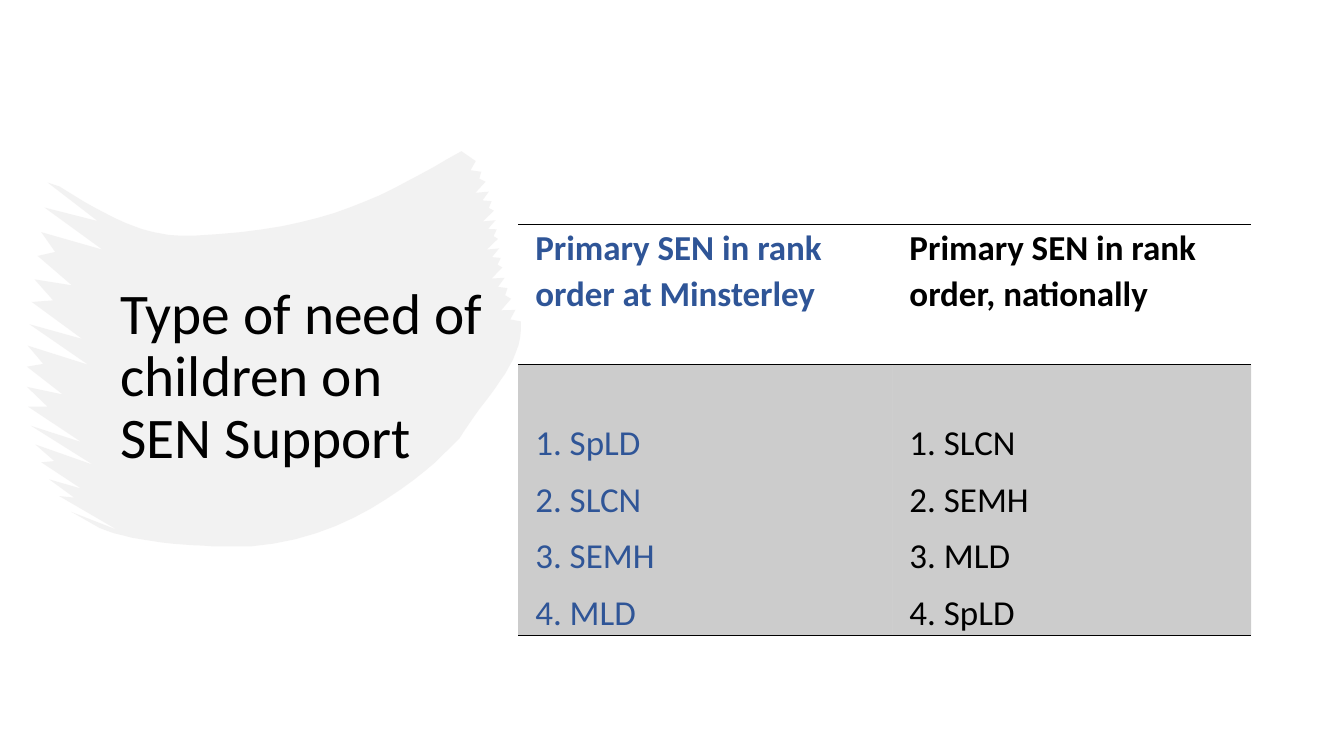
from itertools import cycle, pairwise

from lxml import etree
from pptx import Presentation
from pptx.dml.color import RGBColor
from pptx.enum.text import MSO_ANCHOR, MSO_AUTO_SIZE, PP_ALIGN
from pptx.oxml.ns import qn
from pptx.util import Cm, Pt

MIDDLE, TOP = MSO_ANCHOR.MIDDLE, MSO_ANCHOR.TOP
LEFT, NO_AUTOFIT = PP_ALIGN.LEFT, MSO_AUTO_SIZE.NONE
COLORS = {"ink": "000000", "school": "2F5597", "brush": "E7E6E6"}
FONT = "Calibri"

HEADING = "Type of need of children on SEN Support"
RANKINGS = [
    ("Primary SEN in rank order at Minsterley", "school",
     ["SpLD", "SLCN", "SEMH", "MLD"]),
    ("Primary SEN in rank order, nationally", "ink",
     ["SLCN", "SEMH", "MLD", "SpLD"]),
]
COLUMN_WIDTHS = (9.43, 9.04)
ROW_HEIGHTS = (3.54, 6.8)
TABLE_LEFT, TABLE_TOP = 13.06, 5.65
LIST_TOP_MARGIN = 1.37
TABLE_TEXT = {"size": 25, "spacing": 1.07, "after": 8}

BRUSH_EDGES = {
    "top left": [(1.5, 4.7), (3.4, 5.9), (4, 5.94), (4.88, 5.94)],
    "top": [(4.88, 5.94), (8.3, 5.8), (9.7, 4.9), (11.63, 3.81)],
    "upper right": [(11.99, 4.06), (12.8, 5.5), (12.3, 6.5), (13.13, 8.1)],
    "lower right": [(13.13, 8.1), (13.2, 9.2), (12.2, 10), (11.58, 11.05)],
    "bottom": [(11.58, 11.05), (11.5, 11.1), (9.45, 13.54), (6.32, 13.77)],
    "bottom left": [(6.32, 13.77), (5.2, 13.8), (3.4, 13.7), (2.5, 13.3)],
    "left": [(1.8, 12.9), (0, 10.8), (0.8, 8), (1.2, 4.6)],
}
BRISTLE_DEPTHS = {
    "left": (1.3, 0.5, 0.9, 0.4, 1.5),
    "upper right": (-0.2, -0.1, -0.3),
}
BRISTLE_SLANT = 0.5
EDGE_STEPS = 16
UNITS_PER_CM = 100


def hex_color(key):
    return RGBColor.from_string(COLORS[key])


def write(paragraph, text, *, size, color, bold=False, spacing=1.0, after=0):
    paragraph.alignment = LEFT
    paragraph.line_spacing = spacing
    paragraph.space_before = Pt(0)
    paragraph.space_after = Pt(after)
    run = paragraph.add_run()
    run.text = text
    run.font.name = FONT
    run.font.size = Pt(size)
    run.font.bold = bold
    run.font.color.rgb = hex_color(color)


def tint(fill, color, opacity):
    fill.solid()
    fill.fore_color.rgb = hex_color(color)
    for shade in fill._xPr.iter(qn("a:srgbClr")):
        etree.SubElement(shade, qn("a:alpha")).set("val", str(opacity * 1000))


def sample_curve(controls):
    def point_at(t):
        weights = ((1 - t) ** 3, 3 * t * (1 - t) ** 2, 3 * t ** 2 * (1 - t), t ** 3)
        return tuple(sum(w * value for w, value in zip(weights, axis))
                     for axis in zip(*controls))
    return [point_at(step / EDGE_STEPS) for step in range(EDGE_STEPS + 1)]


def fray(tips, depths):
    frayed = [tips[0]]
    for (tip, next_tip), depth in zip(pairwise(tips), cycle(depths)):
        root_x = (tip[0] + next_tip[0]) / 2 + depth
        root_y = (tip[1] + next_tip[1]) / 2 + abs(depth) * BRISTLE_SLANT
        frayed += [(root_x, root_y), next_tip]
    return frayed


def brush_outline():
    outline = []
    for side, controls in BRUSH_EDGES.items():
        edge = sample_curve(controls)
        if side in BRISTLE_DEPTHS:
            edge = fray(edge, BRISTLE_DEPTHS[side])
        outline += edge
    return [(x * UNITS_PER_CM, y * UNITS_PER_CM) for x, y in outline]


def add_brush(slide):
    start, *rest = brush_outline()
    builder = slide.shapes.build_freeform(*start, scale=Cm(1) / UNITS_PER_CM)
    builder.add_line_segments(rest, close=True)
    brush = builder.convert_to_shape()
    brush.shadow.inherit = False
    brush.line.fill.background()
    tint(brush.fill, "brush", 50)
    slide.shapes._spTree.insert(2, brush._element)


def add_heading(slide):
    heading = slide.shapes.title
    heading.left, heading.top = Cm(2.78), Cm(1.9)
    heading.width, heading.height = Cm(9.7), Cm(15.27)
    frame = heading.text_frame
    frame.word_wrap = True
    frame.auto_size = NO_AUTOFIT
    frame.vertical_anchor = MIDDLE
    write(frame.paragraphs[0], HEADING, size=41, color="ink", spacing=0.9)


def rule_rows(cell):
    properties = cell._tc.get_or_add_tcPr()
    for side in ("lnL", "lnR", "lnT", "lnB"):
        border = etree.SubElement(properties, qn(f"a:{side}"))
        if side in ("lnL", "lnR"):
            etree.SubElement(border, qn("a:noFill"))
            continue
        border.set("w", str(Pt(1)))
        solid = etree.SubElement(border, qn("a:solidFill"))
        etree.SubElement(solid, qn("a:srgbClr")).set("val", COLORS["ink"])


def format_cell(cell, top_margin):
    cell.margin_left = cell.margin_right = Cm(0.43)
    cell.margin_top, cell.margin_bottom = Cm(top_margin), 0
    cell.vertical_anchor = TOP
    rule_rows(cell)


def add_rankings(slide):
    table = slide.shapes.add_table(
        len(ROW_HEIGHTS), len(RANKINGS), Cm(TABLE_LEFT), Cm(TABLE_TOP),
        Cm(sum(COLUMN_WIDTHS)), Cm(sum(ROW_HEIGHTS))).table
    table.first_row = table.horz_banding = False
    for row, height in zip(table.rows, ROW_HEIGHTS):
        row.height = Cm(height)
    for index, (label, color, needs) in enumerate(RANKINGS):
        table.columns[index].width = Cm(COLUMN_WIDTHS[index])
        label_cell, needs_cell = table.cell(0, index), table.cell(1, index)
        format_cell(label_cell, 0)
        label_cell.fill.background()
        write(label_cell.text_frame.paragraphs[0], label, color=color,
              bold=True, **TABLE_TEXT)
        format_cell(needs_cell, LIST_TOP_MARGIN)
        tint(needs_cell.fill, "ink", 20)
        frame = needs_cell.text_frame
        for rank, need in enumerate(needs, 1):
            paragraph = frame.paragraphs[0] if rank == 1 else frame.add_paragraph()
            write(paragraph, f"{rank}. {need}", color=color, **TABLE_TEXT)


def main():
    deck = Presentation()
    deck.slide_width, deck.slide_height = Cm(33.87), Cm(19.05)
    slide = deck.slides.add_slide(deck.slide_layouts[5])
    add_brush(slide)
    add_heading(slide)
    add_rankings(slide)
    deck.save("out.pptx")


if __name__ == "__main__":
    main()
